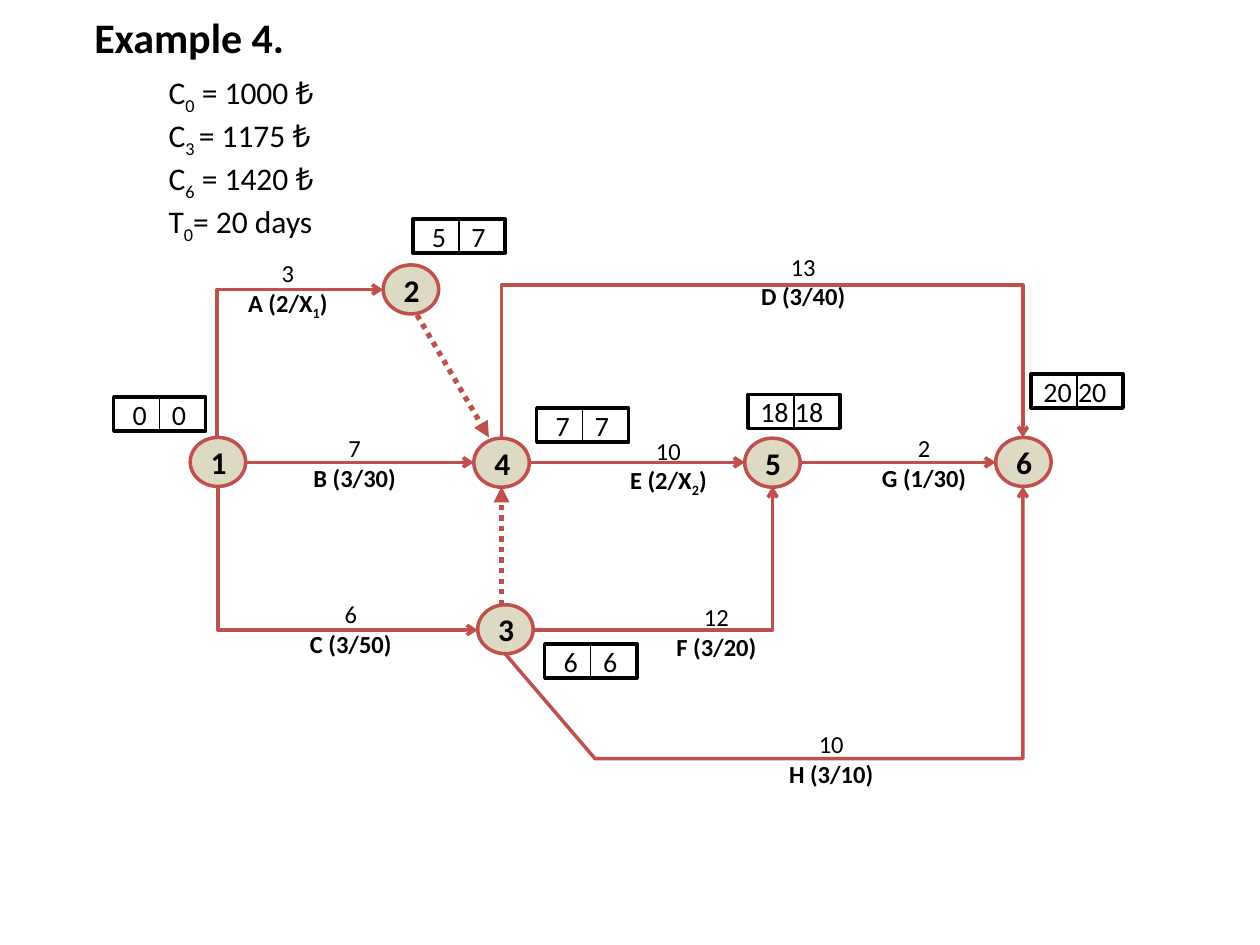
from lxml.etree import SubElement
from pptx import Presentation
from pptx.dml.color import RGBColor
from pptx.enum.dml import MSO_LINE
from pptx.enum.shapes import MSO_CONNECTOR, MSO_SHAPE
from pptx.enum.text import MSO_ANCHOR, PP_ALIGN
from pptx.oxml.ns import qn
from pptx.util import Pt

COLORS = {"text": "000000", "arrow": "C0504D", "node": "DDD9C3", "box": "FFFFFF"}


def add_paragraph(frame, pieces, size, bold=False, align=PP_ALIGN.LEFT):
    paragraph = frame.paragraphs[0]
    if paragraph.runs:
        paragraph = frame.add_paragraph()
    paragraph.alignment = align
    for index, piece in enumerate(pieces):
        run = paragraph.add_run()
        run.text = piece
        run.font.name = "Calibri"
        run.font.size = Pt(size)
        run.font.bold = bold
        run.font.color.rgb = RGBColor.from_string(COLORS["text"])
        if index % 2:
            run._r.get_or_add_rPr().set("baseline", "-25000")
    return paragraph


def style_line(shape, color, width, tail=None):
    shape.line.color.rgb = RGBColor.from_string(COLORS[color])
    shape.line.width = Pt(width)
    if tail:
        SubElement(shape.line._get_or_add_ln(), qn("a:tailEnd"), type=tail)
    if shape._element.spPr.find(qn("a:effectLst")) is None:
        SubElement(shape._element.spPr, qn("a:effectLst"))


presentation = Presentation()
presentation.slide_width = Pt(720)
presentation.slide_height = Pt(540)
slide = presentation.slides.add_slide(presentation.slide_layouts[6])
shapes = slide.shapes

title = shapes.add_textbox(Pt(46.8), Pt(2.9), Pt(213), Pt(36)).text_frame
title.word_wrap = True
add_paragraph(title, ["Example 4."], 24, True)

costs = shapes.add_textbox(Pt(89.3), Pt(38.2), Pt(452), Pt(94.3)).text_frame
costs.word_wrap = True
for pieces in [
    ["C", "0", " = 1000 ₺"],
    ["C", "3 ", "= 1175 ₺"],
    ["C", "6", " = 1420 ₺"],
    ["T", "0", "= 20 days"],
]:
    add_paragraph(costs, pieces, 18)

routes = [
    [(124, 250), (124, 165.5), (219, 165.5)],
    [(124.5, 278), (124.5, 360), (273, 360)],
    [(286.5, 250), (286.5, 163), (584.5, 163), (584.5, 250)],
    [(304, 360), (441.5, 360), (441.5, 278)],
    [(288.7, 373.7), (340, 433.5), (584.5, 433.5), (584.5, 278)],
]
for start, *corners in routes:
    builder = shapes.build_freeform(Pt(start[0]), Pt(start[1]))
    builder.add_line_segments([(Pt(x), Pt(y)) for x, y in corners], close=False)
    route = builder.convert_to_shape()
    route.fill.background()
    route.shadow.inherit = False
    style_line(route, "arrow", 2, "arrow")

for left, right in [(140.5, 270.8), (302.4, 425.6), (457.3, 569)]:
    arrow = shapes.add_connector(
        MSO_CONNECTOR.STRAIGHT, Pt(left), Pt(264.2), Pt(right), Pt(264.2))
    style_line(arrow, "arrow", 2, "arrow")

for start_x, start_y, end_x, end_y in [(238.3, 180, 279.4, 250), (286.6, 345.6, 286.6, 278)]:
    dummy = shapes.add_connector(
        MSO_CONNECTOR.STRAIGHT, Pt(start_x), Pt(start_y), Pt(end_x), Pt(end_y))
    dummy.line.dash_style = MSO_LINE.ROUND_DOT
    style_line(dummy, "arrow", 3, "triangle")

nodes = {
    "1": (108.7, 250), "2": (219, 151.4), "3": (273, 345.6),
    "4": (270.8, 250.4), "5": (425.6, 250.4), "6": (569, 250),
}
for number, (left, top) in nodes.items():
    node = shapes.add_shape(MSO_SHAPE.OVAL, Pt(left), Pt(top), Pt(31.7), Pt(28))
    node.shadow.inherit = False
    node.fill.solid()
    node.fill.fore_color.rgb = RGBColor.from_string(COLORS["node"])
    style_line(node, "arrow", 2)
    node.text_frame.vertical_anchor = MSO_ANCHOR.MIDDLE
    add_paragraph(node.text_frame, [number], 18, True, PP_ALIGN.CENTER)

time_boxes = [
    (236, 125.2, "5\t7"), (306.7, 233.3, "7\t7"), (311.3, 368, "6\t6"),
    (65, 227, "0\t0"), (427.4, 225.4, "18 18"), (589.2, 213.8, "20 20"),
]
for left, top, times in time_boxes:
    box = shapes.add_shape(MSO_SHAPE.RECTANGLE, Pt(left), Pt(top), Pt(52.6), Pt(19.4))
    box.shadow.inherit = False
    box.fill.solid()
    box.fill.fore_color.rgb = RGBColor.from_string(COLORS["box"])
    style_line(box, "text", 2)
    box.text_frame.vertical_anchor = MSO_ANCHOR.MIDDLE
    box.text_frame.margin_right = 0
    paragraph = add_paragraph(box.text_frame, [times], 16)
    if "\t" in times:
        box.text_frame.margin_left = Pt(10.8)
        tabs = SubElement(paragraph._p.get_or_add_pPr(), qn("a:tabLst"))
        SubElement(tabs, qn("a:tab"), pos=str(Pt(22.5)), algn="l")
    divider = shapes.add_connector(MSO_CONNECTOR.STRAIGHT, 0, 0, 0, 0)
    divider.begin_connect(box, 0)
    divider.end_connect(box, 2)
    style_line(divider, "text", 0.75)

activities = [
    (164.5, 144, "3", ["A (2/X", "1", ")"]),
    (202.7, 244, "7", ["B (3/30)"]),
    (200.5, 339, "6", ["C (3/50)"]),
    (459, 140.4, "13", ["D (3/40)"]),
    (382, 245.5, "10", ["E (2/X", "2", ")"]),
    (409.4, 340.6, "12", ["F (3/20)"]),
    (528.1, 244, "2", ["G (1/30)"]),
    (475, 413.3, "10", ["H (3/10)"]),
]
label_width = 95.8
for center, top, duration, pieces in activities:
    left = center - label_width / 2
    label = shapes.add_textbox(Pt(left), Pt(top), Pt(label_width), Pt(41)).text_frame
    label.word_wrap = True
    add_paragraph(label, [duration], 14, False, PP_ALIGN.CENTER)
    add_paragraph(label, pieces, 14, True, PP_ALIGN.CENTER)

presentation.save("out.pptx")
